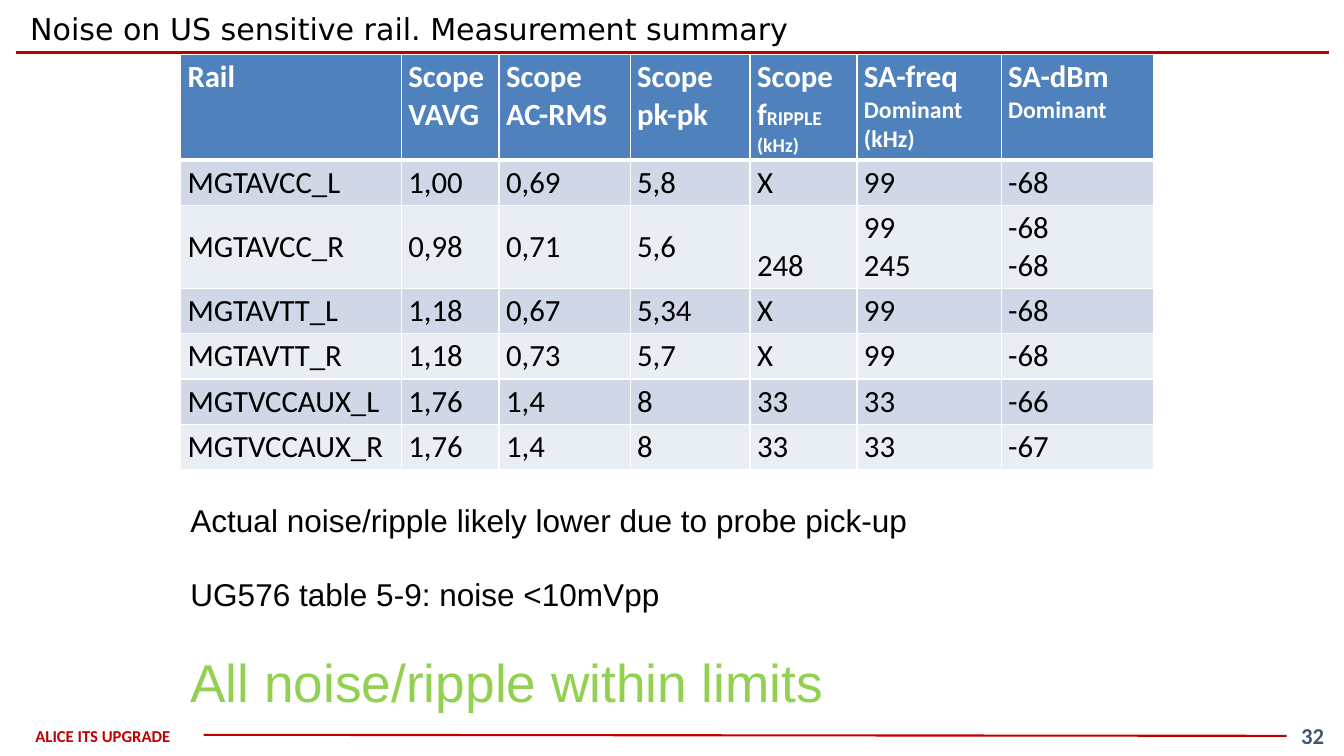
from dataclasses import dataclass

from lxml import etree
from pptx import Presentation
from pptx.dml.color import RGBColor
from pptx.enum import shapes, text
from pptx.oxml import ns
from pptx.util import Inches, Pt

LEFT, CENTER = text.PP_ALIGN.LEFT, text.PP_ALIGN.CENTER
TOP, MIDDLE, BOTTOM = text.MSO_ANCHOR.TOP, text.MSO_ANCHOR.MIDDLE, text.MSO_ANCHOR.BOTTOM


@dataclass(frozen=True)
class Theme:
    black: str = "000000"
    white: str = "FFFFFF"
    red: str = "C00000"
    slate: str = "44546A"
    green: str = "92D050"
    header: str = "4F81BD"
    bands: tuple = ("D0D8E8", "E9EDF4")
    title_font: str = "DejaVu Sans"
    table_font: str = "Calibri"
    body_font: str = "Arial"
    title_size: float = 21.5
    table_size: float = 22
    label_size: float = 17
    unit_size: float = 14
    body_size: float = 22.5
    verdict_size: float = 38
    footer_size: float = 11.9
    number_size: float = 16.2


def apply(target, values):
    for name, value in values.items():
        setattr(target, name, value)


class SlideBuilder:
    def __init__(self, slide, theme):
        self.slide = slide
        self.theme = theme

    def fill_text(self, frame, paragraphs, font, color, bold=False, align=LEFT, gap=0):
        for index, runs in enumerate(paragraphs):
            paragraph = frame.paragraphs[0] if index == 0 else frame.add_paragraph()
            apply(paragraph, {"alignment": align, "space_before": Pt(gap if index else 0)})
            for words, size, *tint in runs:
                run = paragraph.add_run()
                run.text = words
                apply(run.font, {"name": font, "size": Pt(size), "bold": bold})
                run.font.color.rgb = RGBColor.from_string(tint[0] if tint else color)

    def frame_format(self, frame, insets, anchor, wrap=True):
        left, top = (Inches(inset) for inset in insets)
        apply(frame, {"margin_left": left, "margin_right": left, "margin_top": top,
                      "margin_bottom": top, "vertical_anchor": anchor, "word_wrap": wrap})

    def title(self, box, words):
        heading = self.slide.shapes.title
        apply(heading, dict(zip(("left", "top", "width", "height"), map(Inches, box))))
        self.frame_format(heading.text_frame, (0.14, 0.07), MIDDLE)
        self.fill_text(heading.text_frame, [[(words, self.theme.title_size)]],
                       self.theme.title_font, self.theme.black)

    def text(self, box, paragraphs, font, color, insets=(0.1, 0.05), anchor=TOP, wrap=True, **style):
        frame = self.slide.shapes.add_textbox(*map(Inches, box)).text_frame
        self.frame_format(frame, insets, anchor, wrap)
        self.fill_text(frame, paragraphs, font, color, **style)

    def rule(self, start, end, width):
        rule = self.slide.shapes.add_connector(
            shapes.MSO_CONNECTOR.STRAIGHT, *map(Inches, start + end))
        rule.line.width = Pt(width)
        rule.line.color.rgb = RGBColor.from_string(self.theme.red)
        etree.SubElement(rule._element.spPr, ns.qn("a:effectLst"))

    def borders(self, cell, widths):
        properties = cell._tc.get_or_add_tcPr()
        for index, (side, width) in enumerate(zip("LRTB", widths)):
            edge = etree.Element(ns.qn(f"a:ln{side}"), w=str(Pt(width)))
            fill = etree.SubElement(edge, ns.qn("a:solidFill"))
            etree.SubElement(fill, ns.qn("a:srgbClr"), val=self.theme.white)
            properties.insert(index, edge)

    def cell(self, cell, paragraphs, fill, color, anchor, bold, widths):
        apply(cell, {"margin_left": Inches(0.07), "margin_right": Inches(0.07),
                     "margin_top": Inches(0.04), "margin_bottom": Inches(0.04),
                     "vertical_anchor": anchor})
        cell.fill.solid()
        cell.fill.fore_color.rgb = RGBColor.from_string(fill)
        self.fill_text(cell.text_frame, paragraphs, self.theme.table_font, color, bold)
        self.borders(cell, widths)

    def table(self, box, columns, heights, headings, rails):
        theme = self.theme
        grid = self.slide.shapes.add_table(len(heights), len(columns), *map(Inches, box)).table
        for column, width in zip(grid.columns, columns):
            column.width = Inches(width)
        for row, height in zip(grid.rows, heights):
            row.height = Inches(height)
        for index, heading in enumerate(headings):
            self.cell(grid.cell(0, index), heading, theme.header, theme.white,
                      TOP, True, (1, 1, 1, 3))
        for row, rail in enumerate(rails, 1):
            for column, value in enumerate(rail):
                lines = [[(line, theme.table_size)] for line in value.split("\n")]
                anchor = BOTTOM if value == "248" else MIDDLE
                self.cell(grid.cell(row, column), lines, theme.bands[(row - 1) % 2],
                          theme.black, anchor, False, (1, 1, 3 if row == 1 else 1, 1))


def main():
    theme = Theme()
    deck = Presentation()
    apply(deck, {"slide_width": Inches(13.33), "slide_height": Inches(7.5)})
    summary = SlideBuilder(deck.slides.add_slide(deck.slide_layouts[5]), theme)

    summary.rule((0.16, 0.52), (13.18, 0.52), 2.25)
    summary.rule((12.76, 7.3), (2.02, 7.29), 1.5)
    summary.text((0.02, 7.22, 2, 0.16), [[("ALICE ITS UPGRADE", theme.footer_size)]],
                 theme.table_font, theme.red, (0, 0), MIDDLE, bold=True, align=CENTER)
    summary.text((12.76, 7.14, 0.52, 0.31), [[("32", theme.number_size)]],
                 theme.table_font, theme.slate, (0.04, 0.04), MIDDLE, False,
                 bold=True, align=CENTER)
    summary.title((0.16, 0.05, 13.02, 0.47), "Noise on US sensitive rail. Measurement summary")

    large, label, unit = theme.table_size, theme.label_size, theme.unit_size
    scope = [("Scope", large)]
    headings = [
        [[("Rail", large)]],
        [scope, [("VAVG", large)]],
        [scope, [("AC-RMS", large)]],
        [scope, [("pk-pk", large)]],
        [scope, [("f", large), ("RIPPLE", unit)], [("(kHz)", unit)]],
        [[("SA-freq", large)], [("Dominant", label)], [("(kHz)", label)]],
        [[("SA-dBm", large)], [("Dominant", label)]],
    ]
    rails = [
        ("MGTAVCC_L", "1,00", "0,69", "5,8", "X", "99", "-68"),
        ("MGTAVCC_R", "0,98", "0,71", "5,6", "248", "99\n245", "-68\n-68"),
        ("MGTAVTT_L", "1,18", "0,67", "5,34", "X", "99", "-68"),
        ("MGTAVTT_R", "1,18", "0,73", "5,7", "X", "99", "-68"),
        ("MGTVCCAUX_L", "1,76", "1,4", "8", "33", "33", "-66"),
        ("MGTVCCAUX_R", "1,76", "1,4", "8", "33", "33", "-67"),
    ]
    heights = [1.05] + [0.82 if "\n" in rail[-1] else 0.45 for rail in rails]
    summary.table((1.79, 0.54, 9.66, 4.1), (2.19, 0.97, 1.3, 1.19, 1.06, 1.43, 1.51),
                  heights, headings, rails)

    conclusions = [
        [("Actual noise/ripple likely lower due to probe pick-up", theme.body_size)],
        [("UG576 table 5-9: noise <10mVpp", theme.body_size)],
        [("All noise/ripple within limits", theme.verdict_size, theme.green)],
    ]
    summary.text((1.79, 4.92, 9.42, 2.25), conclusions, theme.body_font, theme.black, gap=26)
    deck.save("out.pptx")


if __name__ == "__main__":
    main()
